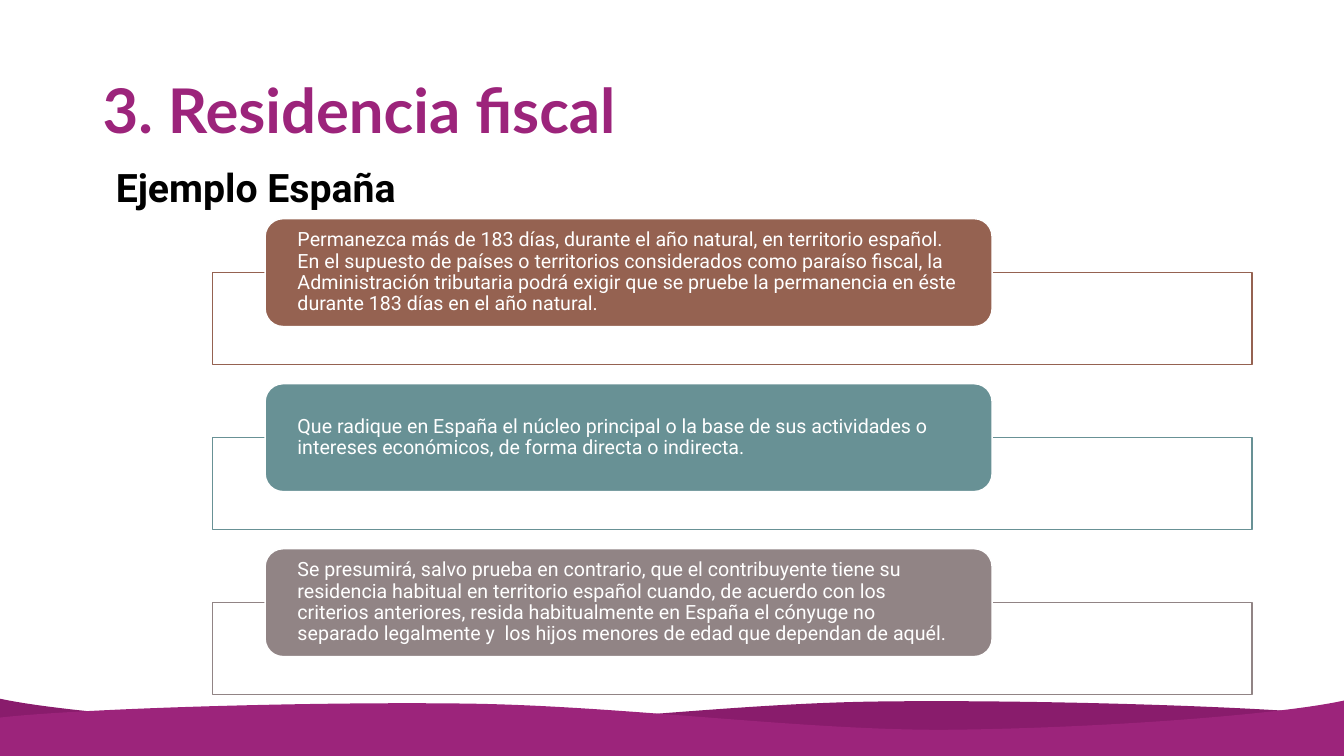
from lxml import etree
from pptx import Presentation
from pptx.dml.color import RGBColor
from pptx.enum.shapes import MSO_SHAPE
from pptx.enum.text import MSO_ANCHOR, PP_ALIGN
from pptx.oxml.ns import qn
from pptx.util import Inches, Pt

RECT, ROUND = MSO_SHAPE.RECTANGLE, MSO_SHAPE.ROUNDED_RECTANGLE
TOP, MIDDLE, LEFT = MSO_ANCHOR.TOP, MSO_ANCHOR.MIDDLE, PP_ALIGN.LEFT
WIDE, HIGH = Inches(13.33), Inches(7.5)
PLUM, DARK, WHITE, BLACK = "9C247B", "891C6C", "FFFFFF", "000000"

# Wave crest: start point, then three per cubic curve (percent of slide size)
CREST = [
    (100, 94.67),
    (94.22, 93.47), (76.97, 92.53), (65.27, 92.8),
    (53.64, 93.07), (40.74, 96.27), (29.86, 96.27),
    (18.98, 96.13), (5.1, 94.4), (-0.08, 92.4),
]

# Cards: first top, pitch, and drop of the frame below it (percent)
FIRST, PITCH, DROP = 28.93, 21.83, 7.13
CARDS = [
    ("956251", "Permanezca más de 183 días, durante el año natural, en "
     "territorio español. En el supuesto de países o territorios "
     "considerados como paraíso fiscal, la Administración tributaria podrá "
     "exigir que se pruebe la permanencia en éste durante 183 días en el "
     "año natural."),
    ("689195", "Que radique en España el núcleo principal o la base de sus "
     "actividades o intereses económicos, de forma directa o indirecta."),
    ("918485", "Se presumirá, salvo prueba en contrario, que el "
     "contribuyente tiene su residencia habitual en territorio español "
     "cuando, de acuerdo con los criterios anteriores, resida habitualmente "
     "en España el cónyuge no separado legalmente y  los hijos menores de "
     "edad que dependan de aquél."),
]


def color(code):
    return RGBColor.from_string(code)


def place(x, y, *size):
    """Turn percents of the slide into lengths, by pairs."""
    whole = (WIDE, HIGH) * 2
    return [round(p * w / 100) for p, w in zip((x, y, *size), whole)]


def assign(item, values):
    for name, value in values.items():
        setattr(item, name, value)


def label(slide, box, text, size, font, tint, bold=False, anchor=TOP,
          side=0.1, edge=0.05, before=0):
    frame = slide.shapes.add_textbox(*place(*box)).text_frame
    assign(frame, {
        "word_wrap": True, "vertical_anchor": anchor,
        "margin_left": Inches(side), "margin_right": Inches(side),
        "margin_top": Inches(edge), "margin_bottom": Inches(edge)})
    para = frame.paragraphs[0]
    assign(para, {"alignment": LEFT, "line_spacing": 0.9,
                  "space_before": Pt(before)})
    run = para.add_run()
    run.text = text
    assign(run.font, {"size": Pt(size), "name": font, "bold": bold})
    run.font.color.rgb = color(tint)


def paint(shape, fill, line=None):
    shape.shadow.inherit = False
    shape.fill.solid()
    shape.fill.fore_color.rgb = color(fill)
    if line:
        shape.line.color.rgb = color(line)
        shape.line.width = Pt(1)
    else:
        shape.line.fill.background()


def fade(shape, share):
    tint = shape._element.spPr.find(qn("a:solidFill"))[0]
    etree.SubElement(tint, qn("a:alpha"), val=str(share * 1000))


def bend(shape, count):
    """Join the first segments, three at a time, into cubic curves."""
    legs = list(shape._element.iter(qn("a:lnTo")))[:3 * count]
    for first in range(0, len(legs), 3):
        curve = etree.Element(qn("a:cubicBezTo"))
        legs[first].addprevious(curve)
        for leg in legs[first:first + 3]:
            curve.append(leg[0])
            leg.getparent().remove(leg)


def wave(slide, crest, fill):
    ends = [(crest[-1][0], 100), (crest[0][0], 100)]
    first, *rest = [place(*point) for point in crest + ends]
    form = slide.shapes.build_freeform(*first, scale=1.0)
    form.add_line_segments(rest, close=True)
    shape = form.convert_to_shape()
    bend(shape, len(crest) // 3)
    paint(shape, fill)


def card(slide, top, tint, text):
    frame = slide.shapes.add_shape(
        RECT, *place(15.83, top + DROP, 77.34, 12.13))
    paint(frame, WHITE, tint)
    fade(frame, 90)
    panel = slide.shapes.add_shape(ROUND, *place(19.73, top, 54.09, 14.27))
    paint(panel, tint, WHITE)
    label(slide, (20.11, top + 0.7, 53.34, 12.8), text, 14, "Roboto", WHITE,
          anchor=MIDDLE, side=0.27, edge=0)


def main():
    deck = Presentation()
    assign(deck, {"slide_width": WIDE, "slide_height": HIGH})
    slide = deck.slides.add_slide(deck.slide_layouts[6])

    # Footer waves: the front one mirrors the back one
    wave(slide, CREST, DARK)
    wave(slide, [(99.92 - x, y + 0.27) for x, y in CREST], PLUM)

    # Headings
    label(slide, (6.9, 5.33, 86.27, 19.33), "3. Residencia fiscal",
          44, "Lato", PLUM, bold=True, anchor=MIDDLE)
    label(slide, (7.88, 21.6, 56.79, 8.27), "Ejemplo España",
          28, "Roboto", BLACK, bold=True, before=10)

    # Cards
    for row, (tint, text) in enumerate(CARDS):
        card(slide, FIRST + row * PITCH, tint, text)

    deck.save("out.pptx")


if __name__ == "__main__":
    main()
